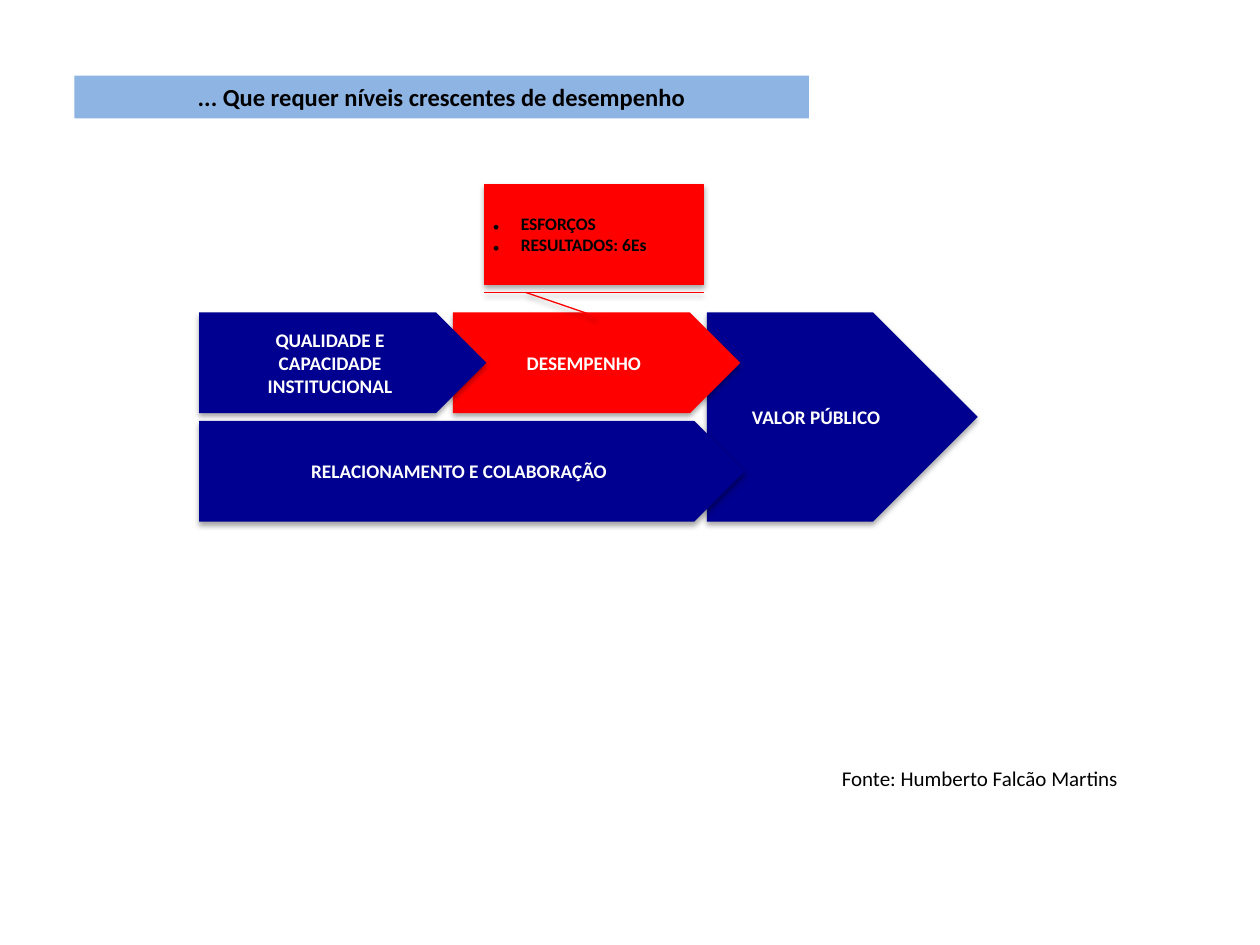
import pptx
import pptx.dml.color
import pptx.enum.shapes
import pptx.enum.text
import pptx.oxml
import pptx.oxml.ns
import pptx.util

SHAPES = pptx.enum.shapes.MSO_SHAPE
ALIGN = pptx.enum.text.PP_ALIGN
ANCHOR = pptx.enum.text.MSO_ANCHOR
AUTO_SIZE = pptx.enum.text.MSO_AUTO_SIZE

COLOURS = {
    "navy": "000090",
    "red": "FF0000",
    "sky": "8EB4E3",
    "white": "FFFFFF",
    "black": "000000",
}
FONT = "Calibri"

# Grid of 100 columns by 75 rows, one cell being a tenth of an inch
CELL = pptx.util.Inches(0.1)
COLUMNS, ROWS = 100, 75

# Arrow layout in grid cells
FIRST_COLUMN, FIRST_ROW = 15.8, 24.8
STEP_COLUMN, STEP_ROW = 20.15, 8.6
ARROW_WIDTH, ARROW_HEIGHT = 22.8, 8


def cells(*values):
    return [round(value * CELL) for value in values]


def colour(name):
    return pptx.dml.color.RGBColor.from_string(COLOURS[name])


def add_shadow(shape):
    """Soft shadow falling straight down."""
    effects = shape._element.spPr.find(pptx.oxml.ns.qn("a:effectLst"))
    effects.append(pptx.oxml.parse_xml(
        f'<a:outerShdw {pptx.oxml.ns.nsdecls("a")} blurRad="40000" dist="23000"'
        ' dir="5400000" rotWithShape="0"><a:srgbClr val="000000">'
        '<a:alpha val="35000"/></a:srgbClr></a:outerShdw>'))


def add_bullet(paragraph):
    properties = paragraph._p.get_or_add_pPr()
    indent = pptx.util.Inches(0.19)
    properties.set("marL", str(indent))
    properties.set("indent", str(-indent))
    properties.append(pptx.oxml.parse_xml(
        f'<a:buFont {pptx.oxml.ns.nsdecls("a")} typeface="Arial"/>'))
    properties.append(pptx.oxml.parse_xml(
        f'<a:buChar {pptx.oxml.ns.nsdecls("a")} char="•"/>'))


def write_lines(shape, lines, size, colour_name, align, bold=True, bullets=False):
    frame = shape.text_frame
    for index, line in enumerate(lines):
        paragraph = frame.add_paragraph() if index else frame.paragraphs[0]
        paragraph.alignment = align
        if bullets:
            add_bullet(paragraph)
        run = paragraph.add_run()
        run.text = line
        run.font.name = FONT
        run.font.size = pptx.util.Pt(size)
        run.font.bold = bold
        run.font.color.rgb = colour(colour_name)


def add_filled_shape(slide, kind, place, fill):
    shape = slide.shapes.add_shape(kind, *cells(*place))
    shape.fill.solid()
    shape.fill.fore_color.rgb = colour(fill)
    shape.line.fill.background()
    shape.shadow.inherit = False
    return shape


def add_arrow(slide, place, fill, lines):
    arrow = add_filled_shape(slide, SHAPES.PENTAGON, place, fill)
    arrow.adjustments[0] = 0.5
    add_shadow(arrow)
    arrow.text_frame.word_wrap = False
    arrow.text_frame.vertical_anchor = ANCHOR.MIDDLE
    write_lines(arrow, lines, 11, "white", ALIGN.CENTER)


def add_callout(slide, place, fill, lines):
    """Callout turned a quarter, with its text turned back to horizontal."""
    callout = add_filled_shape(
        slide, SHAPES.LINE_CALLOUT_1_BORDER_AND_ACCENT_BAR, place, fill)
    callout.rotation = 270
    for index, value in enumerate((0.188, -0.083, 0.519, -0.332)):
        callout.adjustments[index] = value
    callout.line.color.rgb = colour(fill)
    callout.line.width = pptx.util.Pt(0.75)
    add_shadow(callout)
    callout.text_frame.word_wrap = True
    callout.text_frame.vertical_anchor = ANCHOR.MIDDLE
    callout.text_frame._txBody.bodyPr.set("vert", "eaVert")
    write_lines(callout, lines, 10, "black", ALIGN.LEFT, bullets=True)


def add_title(slide, place, text):
    title = add_filled_shape(slide, SHAPES.RECTANGLE, place, "sky")
    title.text_frame.word_wrap = True
    title.text_frame.vertical_anchor = ANCHOR.TOP
    title.text_frame.auto_size = AUTO_SIZE.SHAPE_TO_FIT_TEXT
    write_lines(title, [text], 14, "black", ALIGN.CENTER)


def add_source(slide, place, text):
    source = slide.shapes.add_textbox(*cells(*place))
    source.text_frame.word_wrap = False
    source.text_frame.auto_size = AUTO_SIZE.SHAPE_TO_FIT_TEXT
    write_lines(source, [text], 12, "black", ALIGN.RIGHT, bold=False)


def main():
    presentation = pptx.Presentation()
    presentation.slide_width, presentation.slide_height = cells(COLUMNS, ROWS)
    slide = presentation.slides.add_slide(presentation.slide_layouts[6])

    # Value chain, from back to front
    second_column = FIRST_COLUMN + STEP_COLUMN
    third_column = second_column + STEP_COLUMN
    add_arrow(slide, (third_column, FIRST_ROW, 21.5, STEP_ROW + ARROW_HEIGHT),
              "navy", ["VALOR PÚBLICO"])
    add_arrow(slide, (second_column, FIRST_ROW, ARROW_WIDTH, ARROW_HEIGHT),
              "red", ["DESEMPENHO"])
    add_arrow(slide, (FIRST_COLUMN, FIRST_ROW + STEP_ROW, 43.3, ARROW_HEIGHT),
              "navy", ["RELACIONAMENTO E COLABORAÇÃO"])
    add_arrow(slide, (FIRST_COLUMN, FIRST_ROW, ARROW_WIDTH, ARROW_HEIGHT),
              "navy", ["QUALIDADE E", "CAPACIDADE", "INSTITUCIONAL"])

    # Note on performance
    add_callout(slide, (43.2, 9.9, 7.9, 17.4), "red",
                ["ESFORÇOS", "RESULTADOS: 6Es"])

    # Title and source
    add_title(slide, (5.9, 6, 58.3, 3.4),
              "... Que requer níveis crescentes de desempenho")
    add_source(slide, (65.5, 60.3, 24.2, 3), "Fonte: Humberto Falcão Martins")

    presentation.save("out.pptx")


if __name__ == "__main__":
    main()
